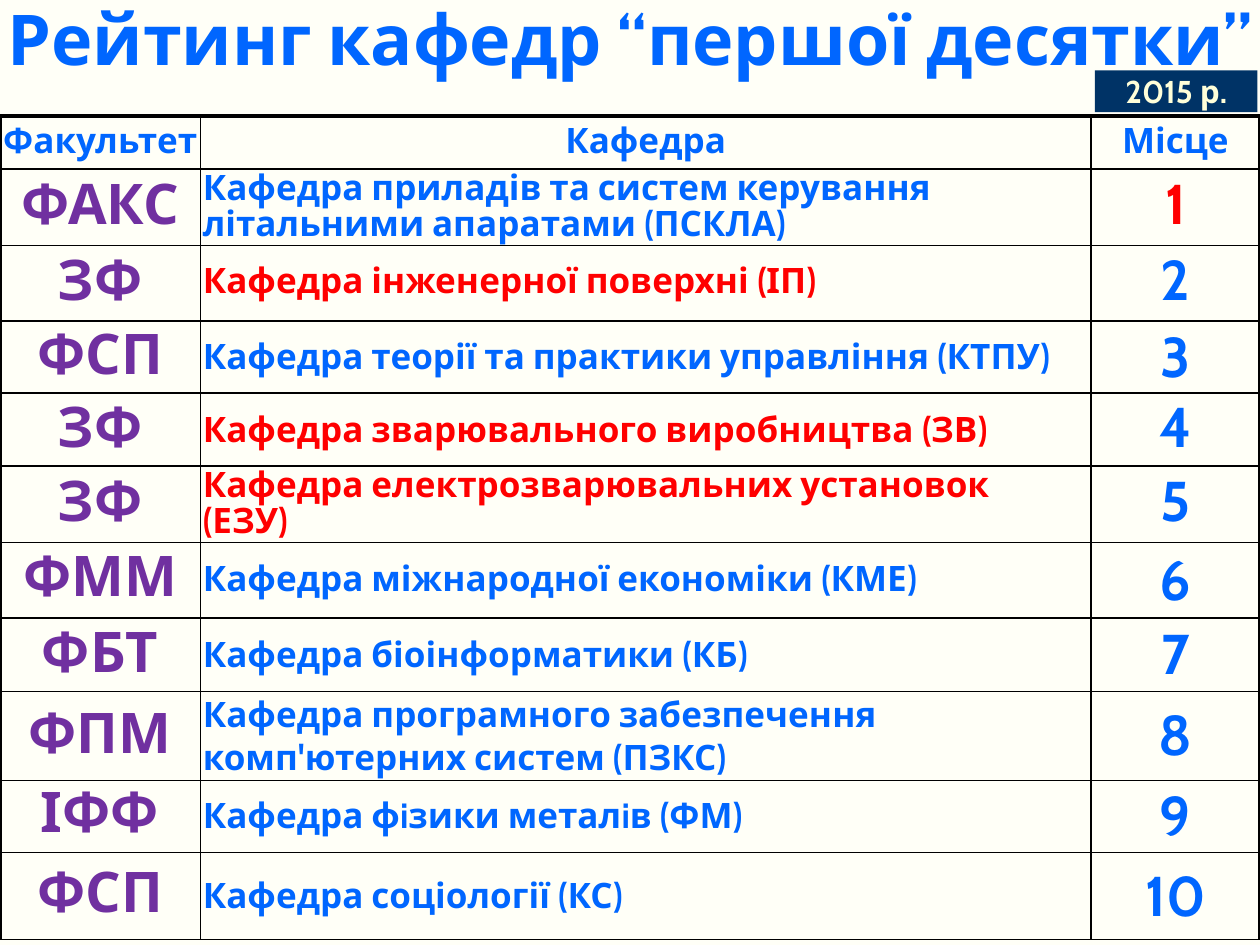
from lxml import etree
from pptx import Presentation
from pptx import util as u
from pptx.dml.color import RGBColor
from pptx.enum import shapes, text
from pptx.oxml import ns

BLUE, RED, PURPLE = "0066FF", "FF0000", "7030A0"
CENTER, LEFT = text.PP_ALIGN.CENTER, text.PP_ALIGN.LEFT


def write(frame, lines, size, color, align=CENTER, spacing=None):
    """Fill a text frame, one paragraph for each line."""
    for i, line in enumerate(lines.split("\n")):
        para = frame.paragraphs[0] if i == 0 else frame.add_paragraph()
        para.alignment = align
        if spacing:
            para.line_spacing = spacing
        span = para.add_run()
        span.text = line
        span.font.name = "Cabin"
        span.font.size = u.Pt(size)
        span.font.bold = True
        span.font.color.rgb = RGBColor.from_string(color)


def draw_borders(cell, widths):
    """Draw black cell borders; widths in points, keyed by side."""
    props = cell._tc.get_or_add_tcPr()
    for i, side in enumerate("LRTB"):
        line = etree.Element(ns.qn(f"a:ln{side}"), w=str(u.Pt(widths[side])))
        fill = etree.SubElement(line, ns.qn("a:solidFill"))
        etree.SubElement(fill, ns.qn("a:srgbClr"), val="000000")
        props.insert(i, line)


deck = Presentation()
deck.slide_width, deck.slide_height = u.Inches(10), u.Inches(7.5)
page = deck.slides.add_slide(deck.slide_layouts[6])
page.background.fill.solid()
page.background.fill.fore_color.rgb = RGBColor.from_string("FFFFF7")

# Title and year badge
title = page.shapes.add_textbox(0, u.Inches(0.11), u.Inches(10), u.Inches(0.53))
badge = page.shapes.add_shape(shapes.MSO_SHAPE.RECTANGLE, u.Inches(8.69),
                              u.Inches(0.56), u.Inches(1.29), u.Inches(0.33))
badge.shadow.inherit = False
badge.fill.solid()
badge.fill.fore_color.rgb = RGBColor.from_string("003366")
badge.line.fill.background()
for box in (title, badge):
    frame = box.text_frame
    frame.word_wrap = True
    frame.auto_size = text.MSO_AUTO_SIZE.SHAPE_TO_FIT_TEXT
    frame.vertical_anchor = text.MSO_ANCHOR.TOP
    frame.margin_left = frame.margin_right = u.Inches(0.02)
    frame.margin_top = frame.margin_bottom = u.Inches(0.01)
write(title.text_frame, "Рейтинг кафедр “першої десятки”", 40, BLUE, spacing=0.75)
write(badge.text_frame, "2015 р.", 18, "FFFFD9")

# Ranking: row height, faculty, department, department colour,
# then line spacing of faculty, department and place
headers = ["Факультет", "Кафедра", "Місце"]
ranking = [
    (0.6, "ФАКС", "Кафедра приладів та систем керування літальними апаратами (ПСКЛА)",
     BLUE, (0.85, 0.85, 0.85)),
    (0.6, "ЗФ", "Кафедра інженерної поверхні (ІП)", RED, (0.85, 0.85, 0.85)),
    (0.56, "ФСП", "Кафедра теорії та практики управління (КТПУ)", BLUE, (0.85, None, None)),
    (0.58, "ЗФ", "Кафедра зварювального виробництва (ЗВ)", RED, (0.85, None, 0.85)),
    (0.57, "ЗФ", "Кафедра електрозварювальних установок\n(ЕЗУ)", RED, (0.85, 0.85, 0.85)),
    (0.6, "ФММ", "Кафедра міжнародної економіки (КМЕ)", BLUE, (0.8, 0.85, None)),
    (0.58, "ФБТ", "Кафедра біоінформатики (КБ)", BLUE, (0.85, None, None)),
    (0.66, "ФПМ", "Кафедра програмного забезпечення комп'ютерних систем (ПЗКС)",
     BLUE, (0.85, None, None)),
    (0.56, "ІФФ", "Кафедра фiзики металiв (ФМ)", BLUE, (0.8, None, None)),
    (0.69, "ФСП", "Кафедра соціології (КС)", BLUE, (0.8, None, None)),
]
table = page.shapes.add_table(len(ranking) + 1, 3, 0, u.Inches(0.92),
                              u.Inches(10), u.Inches(6.53)).table
table.first_row = table.horz_banding = False
for column, width in zip(table.columns, (1.59, 7.07, 1.34)):
    column.width = u.Inches(width)
for row, height in zip(table.rows, [0.42] + [entry[0] for entry in ranking]):
    row.height = u.Inches(height)

# Cell margins and borders, with a thick left, top and right edge
for r, row in enumerate(table.rows):
    for c, cell in enumerate(row.cells):
        cell.fill.background()
        cell.vertical_anchor = text.MSO_ANCHOR.MIDDLE
        cell.margin_left = cell.margin_right = u.Inches(0.02)
        cell.margin_top = cell.margin_bottom = u.Inches(0.02)
        draw_borders(cell, {"L": 2.25 if c == 0 else 1, "R": 2.25 if c == 2 else 1,
                            "T": 2.25 if r == 0 else 1, "B": 1})

# Table text
for c, header in enumerate(headers):
    write(table.cell(0, c).text_frame, header, 20, BLUE, spacing=0.85)
for place, (_, faculty, department, color, spacings) in enumerate(ranking, 1):
    contents = [(faculty, 32, PURPLE, CENTER),
                (department, 20, color, LEFT),
                (str(place), 32, RED if place == 1 else BLUE, CENTER)]
    for c, (content, spacing) in enumerate(zip(contents, spacings)):
        write(table.cell(place, c).text_frame, *content, spacing)

deck.save("out.pptx")
